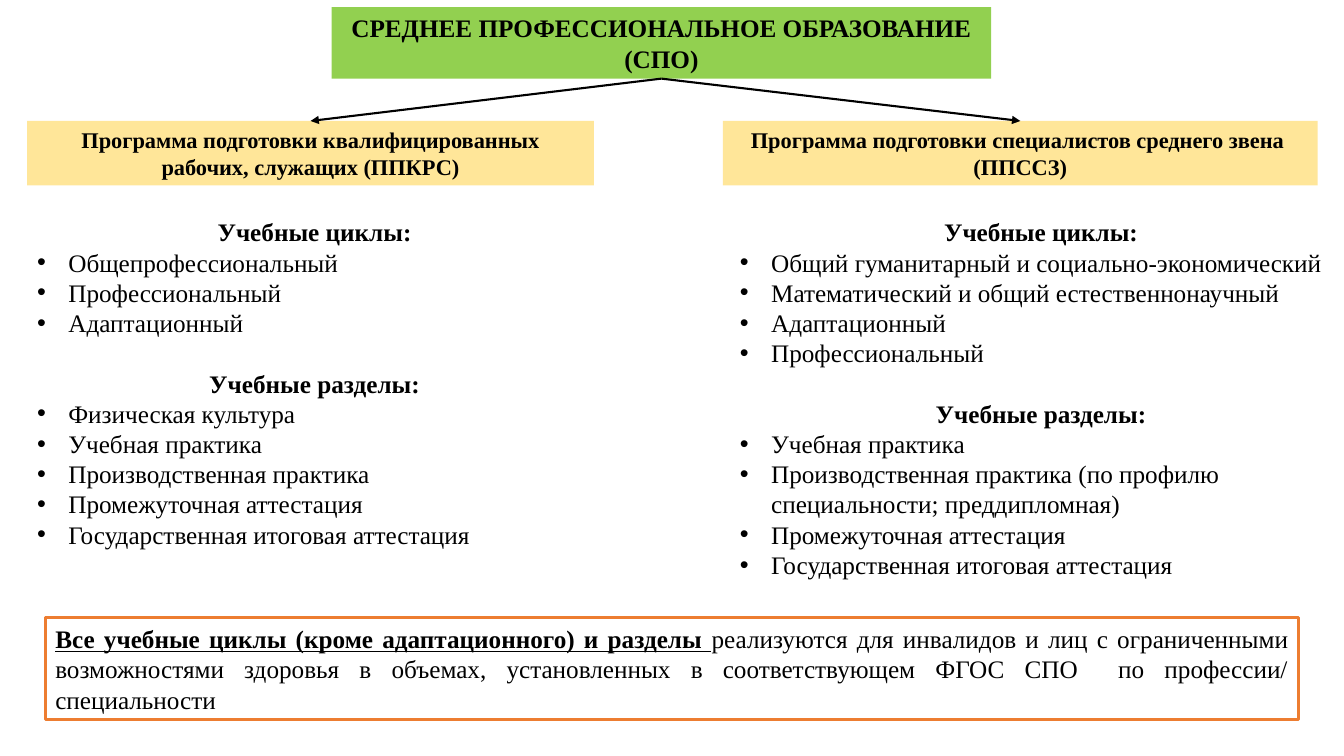
"""Build a slide on the two programmes of secondary vocational education."""
from dataclasses import dataclass

from lxml import etree
from pptx import Presentation
from pptx import util as u
from pptx.dml import color
from pptx.enum import shapes, text
from pptx.oxml import ns


@dataclass(frozen=True)
class Theme:
    """Colours, font and type sizes of the slide."""
    font: str = "Times New Roman"
    ink: str = "000000"
    paper: str = "FFFFFF"
    green: str = "92D050"
    sand: str = "FFE699"
    orange: str = "ED7D31"
    body: int = 18
    label: int = 16


THEME = Theme()
MID = text.PP_ALIGN.CENTER
LEFT = text.PP_ALIGN.LEFT
INDENT = u.Inches(0.31)

CYCLES = "Учебные циклы:"
PARTS = "Учебные разделы:"
FINALS = ["Промежуточная аттестация", "Государственная итоговая аттестация"]
WORKER = {
    CYCLES: ["Общепрофессиональный", "Профессиональный", "Адаптационный"],
    PARTS: ["Физическая культура", "Учебная практика",
            "Производственная практика", *FINALS],
}
EXPERT = {
    CYCLES: ["Общий гуманитарный и социально-экономический",
             "Математический и общий естественнонаучный",
             "Адаптационный", "Профессиональный"],
    PARTS: ["Учебная практика",
            "Производственная практика (по профилю специальности; преддипломная)",
            *FINALS],
}


def rgb(code):
    """Turn a hex code into a colour."""
    return color.RGBColor.from_string(code)


def add_run(para, words, size=THEME.body, bold=False, under=False):
    """Add one styled run to a paragraph."""
    run = para.add_run()
    run.text = words
    font = run.font
    font.name, font.size = THEME.font, u.Pt(size)
    font.bold, font.underline = bold, under
    font.color.rgb = rgb(THEME.ink)


def next_para(frame, align):
    """Return the first paragraph if still empty, else a new one."""
    first = frame.paragraphs[0]
    para = frame.add_paragraph() if first.runs else first
    para.alignment = align
    return para


def add_bullet(para):
    """Give a paragraph a round bullet and a hanging indent."""
    props = para._p.get_or_add_pPr()
    props.set("marL", str(INDENT))
    props.set("indent", str(-INDENT))
    face = etree.SubElement(props, ns.qn("a:buFont"))
    face.set("typeface", "Arial")
    etree.SubElement(props, ns.qn("a:buChar")).set("char", "•")


def add_box(slide, place, fill, edge=None):
    """Add a plain rectangle and return it."""
    box = slide.shapes.add_shape(
        shapes.MSO_SHAPE.RECTANGLE, *map(u.Inches, place))
    box.shadow.inherit = False
    box.fill.solid()
    box.fill.fore_color.rgb = rgb(fill)
    if edge:
        box.line.color.rgb = rgb(edge)
        box.line.width = u.Pt(2.25)
    else:
        box.line.fill.background()
    box.text_frame.word_wrap = True
    return box


def add_head(slide, place, fill, size, *lines):
    """Add a filled heading box with bold centred lines."""
    box = add_box(slide, place, fill)
    for line in lines:
        add_run(next_para(box.text_frame, MID), line, size, bold=True)
    return box


def add_lists(slide, place, groups):
    """Add a text box of titled bullet lists."""
    frame = slide.shapes.add_textbox(*map(u.Inches, place)).text_frame
    frame.word_wrap = True
    for rank, (title, items) in enumerate(groups.items()):
        para = next_para(frame, MID)
        para.space_before = u.Pt(21.6 if rank else 0)
        add_run(para, title, bold=True)
        for item in items:
            para = next_para(frame, LEFT)
            add_bullet(para)
            add_run(para, item)


def add_note(slide, place):
    """Add the framed note at the foot."""
    frame = add_box(slide, place, THEME.paper, THEME.orange).text_frame
    para = next_para(frame, text.PP_ALIGN.JUSTIFY)
    add_run(para, "Все учебные циклы (кроме адаптационного) и разделы ",
            bold=True, under=True)
    add_run(para, "реализуются для инвалидов и лиц с ограниченными "
                  "возможностями здоровья в объемах, установленных в "
                  "соответствующем ФГОС СПО  по профессии/ специальности")


def add_arrow(slide, upper, lower):
    """Join the foot of one box to the top of another with an arrow."""
    link = slide.shapes.add_connector(
        shapes.MSO_CONNECTOR.STRAIGHT, 0, 0, 0, 0)
    link.begin_connect(upper, 2)
    link.end_connect(lower, 0)
    link.line.color.rgb = rgb(THEME.ink)
    link.line.width = u.Pt(1.5)
    tip = etree.SubElement(link.line._get_or_add_ln(), ns.qn("a:tailEnd"))
    tip.set("type", "triangle")
    etree.SubElement(link._element.spPr, ns.qn("a:effectLst"))


def main():
    """Build and save the slide."""
    deck = Presentation()
    deck.slide_width, deck.slide_height = u.Inches(13.33), u.Inches(7.5)
    slide = deck.slides.add_slide(deck.slide_layouts[6])
    add_lists(slide, (0.27, 2.1, 5.7, 3.43), WORKER)
    add_lists(slide, (7.24, 2.1, 6.17, 3.74), EXPERT)
    add_note(slide, (0.45, 6.13, 12.43, 1.01))
    root = add_head(slide, (3.29, 0.07, 6.54, 0.71), THEME.green, THEME.body,
                    "СРЕДНЕЕ ПРОФЕССИОНАЛЬНОЕ ОБРАЗОВАНИЕ (СПО)")
    heads = [
        add_head(slide, (0.27, 1.2, 5.62, 0.64), THEME.sand, THEME.label,
                 "Программа подготовки квалифицированных "
                 "рабочих, служащих (ППКРС)"),
        add_head(slide, (7.17, 1.2, 5.9, 0.64), THEME.sand, THEME.label,
                 "Программа подготовки специалистов среднего звена ",
                 "(ППССЗ)"),
    ]
    for head in heads:
        add_arrow(slide, root, head)
    deck.save("out.pptx")


if __name__ == "__main__":
    main()
